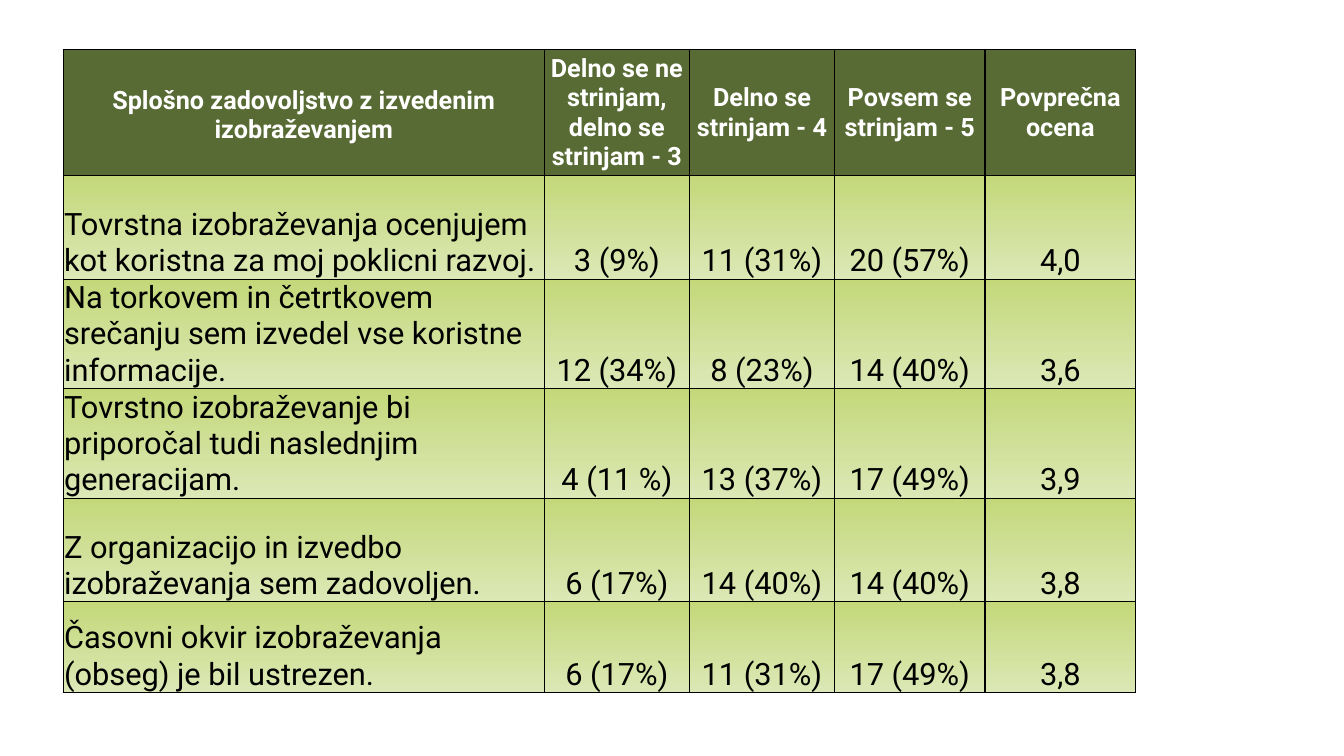
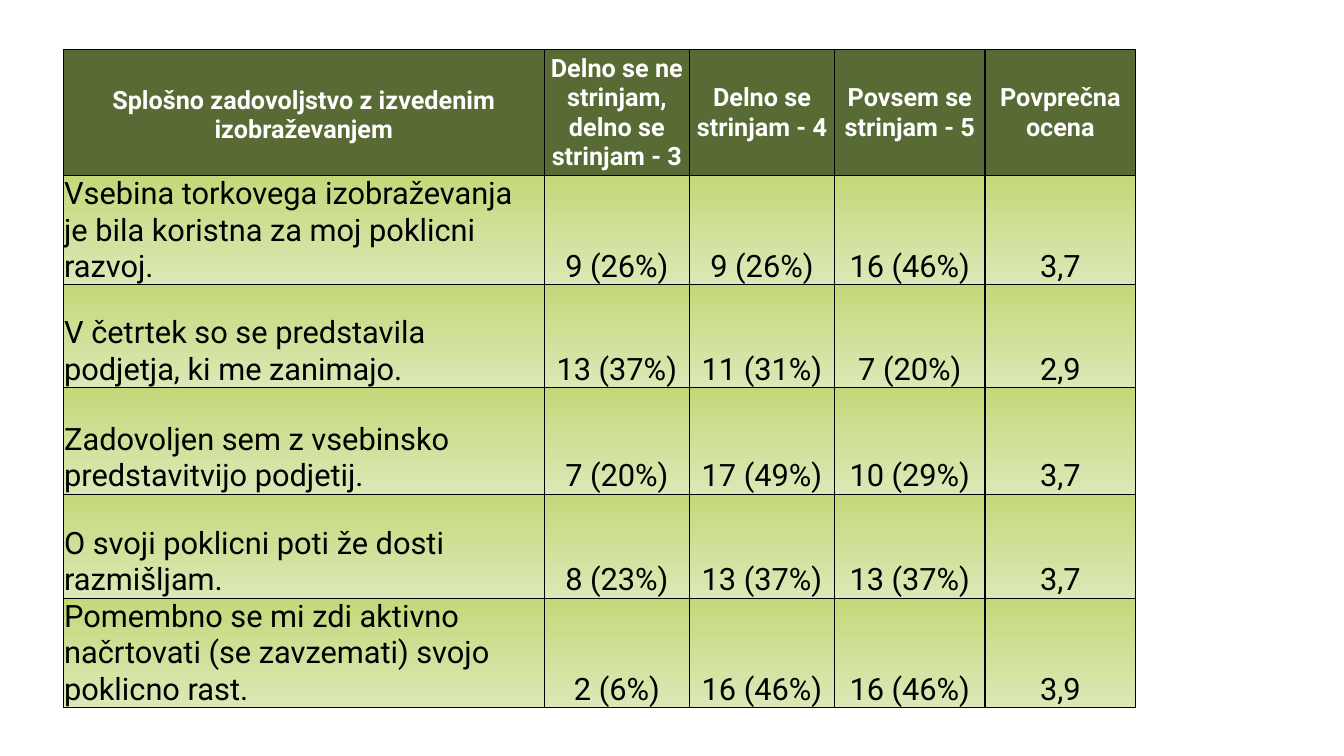
from dataclasses import dataclass

from lxml.etree import SubElement
from pptx import Presentation
from pptx.dml.color import RGBColor
from pptx.enum.text import MSO_ANCHOR as Anchor, PP_ALIGN as Align
from pptx.oxml.ns import qn
from pptx.util import Inches, Pt


@dataclass(frozen=True)
class Theme:
    font: str = "Roboto"
    header_size: int = 18
    body_size: int = 22
    border_width: int = 1
    border: str = "000000"
    header_fill: str = "586B34"
    header_text: str = "FFFFFF"
    body_top: str = "C4D87A"
    body_bottom: str = "DCE8B6"
    body_text: str = "000000"


LEFT, TOP = 4.7, 6.53
COLUMN_SHARES = [35.8, 10.8, 10.8, 11.2, 11.2]
ROW_SHARES = [16.67, 13.73, 13.6, 14.13, 13.73, 12]
INSET = Inches(0.01)
HEADING_LIFT = Inches(0.3)

HEADINGS = [
    "Splošno zadovoljstvo z izvedenim izobraževanjem",
    "Delno se ne strinjam, delno se strinjam - 3",
    "Delno se strinjam - 4",
    "Povsem se strinjam - 5",
    "Povprečna ocena",
]

SURVEY_PARTS = [
    [
        ["Tovrstna izobraževanja ocenjujem kot koristna za moj poklicni razvoj.",
         "3 (9%)", "11 (31%)", "20 (57%)", "4,0"],
        ["Na torkovem in četrtkovem srečanju sem izvedel vse koristne informacije.",
         "12 (34%)", "8 (23%)", "14 (40%)", "3,6"],
        ["Tovrstno izobraževanje bi priporočal tudi naslednjim generacijam.",
         "4 (11 %)", "13 (37%)", "17 (49%)", "3,9"],
        ["Z organizacijo in izvedbo izobraževanja sem zadovoljen.",
         "6 (17%)", "14 (40%)", "14 (40%)", "3,8"],
        ["Časovni okvir izobraževanja (obseg) je bil ustrezen.",
         "6 (17%)", "11 (31%)", "17 (49%)", "3,8"],
    ],
    [
        ["Vsebina torkovega izobraževanja je bila koristna za moj poklicni razvoj.",
         "9 (26%)", "9 (26%)", "16 (46%)", "3,7"],
        ["V četrtek so se predstavila podjetja, ki me zanimajo.",
         "13 (37%)", "11 (31%)", "7 (20%)", "2,9"],
        ["Zadovoljen sem z vsebinsko predstavitvijo podjetij.",
         "7 (20%)", "17 (49%)", "10 (29%)", "3,7"],
        ["O svoji poklicni poti že dosti razmišljam.",
         "8 (23%)", "13 (37%)", "13 (37%)", "3,7"],
        ["Pomembno se mi zdi aktivno načrtovati (se zavzemati) svojo poklicno rast.",
         "2 (6%)", "16 (46%)", "16 (46%)", "3,9"],
    ],
]


class Deck:
    def __init__(self, theme):
        self.theme = theme
        self.presentation = Presentation()
        self.presentation.slide_width = Inches(13.33)
        self.presentation.slide_height = Inches(7.5)
        self.slide = None

    def across(self, percent):
        return round(self.presentation.slide_width * percent / 100)

    def down(self, percent):
        return round(self.presentation.slide_height * percent / 100)

    def add_slide(self):
        blank = self.presentation.slide_layouts[6]
        self.slide = self.presentation.slides.add_slide(blank)

    def add_survey(self, headings, answers):
        frame = self.slide.shapes.add_table(
            len(answers) + 1, len(headings), self.across(LEFT), self.down(TOP),
            self.across(sum(COLUMN_SHARES)), self.down(sum(ROW_SHARES)))
        survey = frame.table
        survey.horz_banding = False
        for column, share in zip(survey.columns, COLUMN_SHARES):
            column.width = self.across(share)
        for row, share in zip(survey.rows, ROW_SHARES):
            row.height = self.down(share)
        for column, heading in enumerate(headings):
            self.header_cell(survey.cell(0, column), heading, column == 0)
        for row, answer in enumerate(answers, 1):
            for column, entry in enumerate(answer):
                self.body_cell(survey.cell(row, column), entry, column == 0)

    def header_cell(self, cell, heading, is_topic):
        theme = self.theme
        self.set_text(cell, heading, Align.CENTER, theme.header_size, theme.header_text, True)
        cell.vertical_anchor = Anchor.BOTTOM if is_topic else Anchor.MIDDLE
        if is_topic:
            cell.margin_bottom = HEADING_LIFT
        cell.fill.solid()
        cell.fill.fore_color.rgb = RGBColor.from_string(theme.header_fill)

    def body_cell(self, cell, entry, is_statement):
        theme = self.theme
        align = Align.LEFT if is_statement else Align.CENTER
        self.set_text(cell, entry, align, theme.body_size, theme.body_text, False)
        cell.vertical_anchor = Anchor.BOTTOM
        cell.fill.gradient()
        cell.fill.gradient_angle = 270
        for stop, colour in zip(cell.fill.gradient_stops, (theme.body_top, theme.body_bottom)):
            stop.color.rgb = RGBColor.from_string(colour)

    def set_text(self, cell, text, align, size, colour, bold):
        cell.text = text
        cell.margin_left = cell.margin_right = cell.margin_top = INSET
        cell.margin_bottom = 0
        paragraph = cell.text_frame.paragraphs[0]
        paragraph.alignment = align
        font = paragraph.font
        font.name, font.size, font.bold = self.theme.font, Pt(size), bold
        font.color.rgb = RGBColor.from_string(colour)
        self.outline(cell)

    def outline(self, cell):
        properties = cell._tc.get_or_add_tcPr()
        for side in ("a:lnL", "a:lnR", "a:lnT", "a:lnB"):
            line = SubElement(properties, qn(side), w=str(Pt(self.theme.border_width)))
            fill = SubElement(line, qn("a:solidFill"))
            SubElement(fill, qn("a:srgbClr"), val=self.theme.border)


def main():
    deck = Deck(Theme())
    for answers in SURVEY_PARTS:
        deck.add_slide()
        deck.add_survey(HEADINGS, answers)
    deck.presentation.save("out.pptx")


if __name__ == "__main__":
    main()
